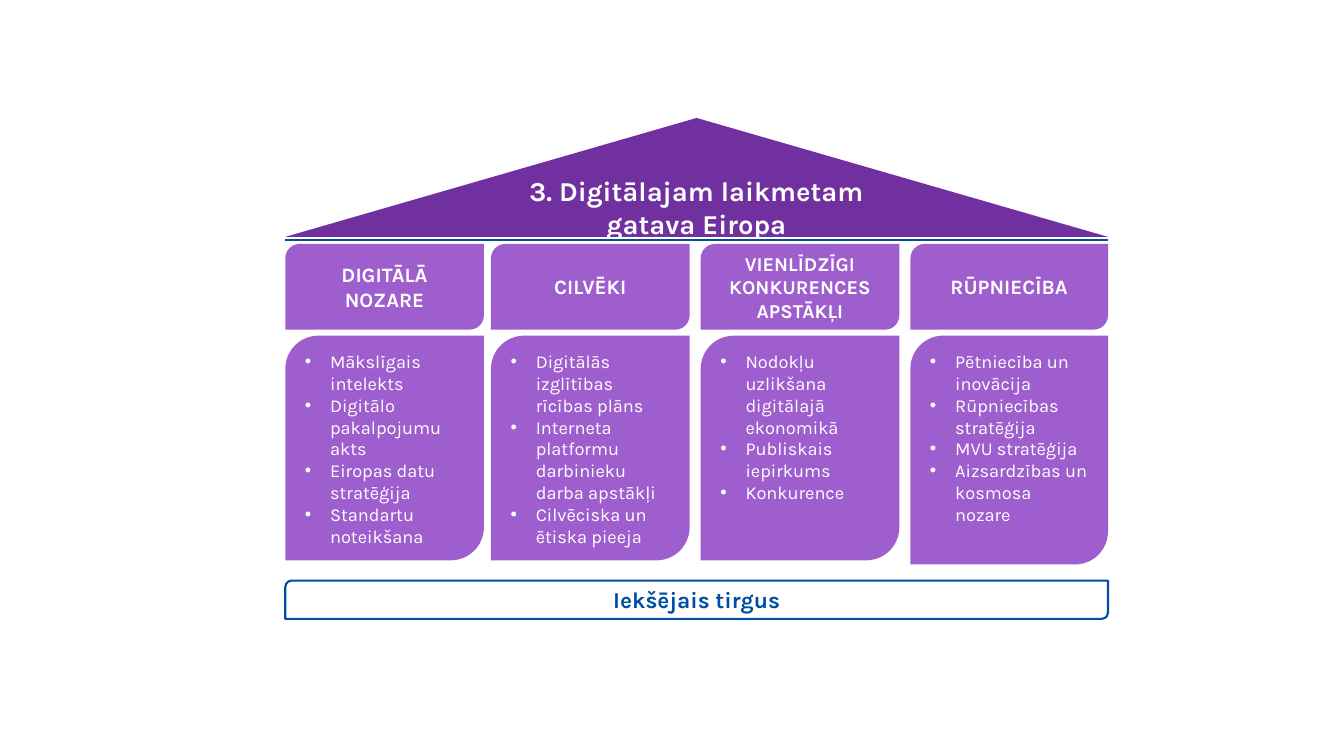
from lxml.etree import SubElement as Sub
from pptx import Presentation
from pptx.dml.color import RGBColor as Rgb
from pptx.enum.shapes import MSO_CONNECTOR as Conn, MSO_SHAPE as Kind
from pptx.enum.text import MSO_ANCHOR as Anchor, PP_ALIGN as Align
from pptx.oxml.ns import qn
from pptx.util import Inches, Pt

HUES = {"roof": "7030A0", "wall": "9E5ECE", "blue": "004DA2", "white": "FFFFFF"}
FACE = "Karla"
LEFT, WIDTH = 2.83, 8.16
COLS = [
    (2.83, 1.97, 2.23, "DIGITĀLĀ NOZARE", 14.6,
     ["Mākslīgais intelekts", "Digitālo pakalpojumu akts",
      "Eiropas datu stratēģija", "Standartu noteikšana"]),
    (4.87, 1.97, 2.23, "CILVĒKI", 14.6,
     ["Digitālās izglītības rīcības plāns",
      "Interneta platformu darbinieku darba apstākļi",
      "Cilvēciska un ētiska pieeja"]),
    (6.95, 1.97, 2.23, "VIENLĪDZĪGI KONKURENCES APSTĀKĻI", 14,
     ["Nodokļu uzlikšana digitālajā ekonomikā", "Publiskais iepirkums",
      "Konkurence"]),
    (9.03, 1.96, 2.27, "RŪPNIECĪBA", 14.6,
     ["Pētniecība un inovācija", "Rūpniecības stratēģija", "MVU stratēģija",
      "Aizsardzības un kosmosa nozare"]),
]


def hue(name):
    """Return the named colour."""
    return Rgb.from_string(HUES[name])


def add_block(slide, kind, box, fill=None):
    """Add a flat shape, filled or with a blue outline."""
    block = slide.shapes.add_shape(kind, *map(Inches, box))
    block.shadow.inherit = False
    if fill:
        block.fill.solid()
        block.fill.fore_color.rgb = hue(fill)
        block.line.fill.background()
    else:
        block.fill.background()
        block.line.color.rgb = hue("blue")
        block.line.width = Pt(1.5)
    block.text_frame.word_wrap = True
    return block


def style(para, size, color="white", bold=False):
    """Format the runs of a paragraph."""
    for run in para.runs:
        font = run.font
        font.name, font.size, font.bold = FACE, Pt(size), bold
        font.color.rgb = hue(color)


def add_label(slide, kind, box, text, size, fill=None):
    """Add a block with a centred bold label."""
    frame = add_block(slide, kind, box, fill).text_frame
    frame.text = text
    frame.vertical_anchor = Anchor.MIDDLE
    para = frame.paragraphs[0]
    para.alignment = Align.CENTER
    style(para, size, "white" if fill else "blue", True)


def add_list(slide, box, items):
    """Add a block with a bulleted list."""
    frame = add_block(slide, Kind.ROUND_2_DIAG_RECTANGLE, box, "wall").text_frame
    frame.vertical_anchor = Anchor.TOP
    frame.text = "\n".join(items)
    for para in frame.paragraphs:
        para.alignment = Align.LEFT
        props = para._p.get_or_add_pPr()
        props.set("marL", str(Inches(0.25)))
        props.set("indent", str(-Inches(0.25)))
        Sub(props, qn("a:buFont"), typeface="Arial")
        Sub(props, qn("a:buChar"), char="•")
        style(para, 13)


def add_roof(slide, left, top, width):
    """Add the gable with its title and the beam below."""
    add_label(slide, Kind.ISOSCELES_TRIANGLE, (left, top, width, 1.18),
              "3. Digitālajam laikmetam gatava Eiropa", 19.5, "roof")
    ends = (left, top + 1.21, left + width, top + 1.21)
    beam = slide.shapes.add_connector(Conn.STRAIGHT, *map(Inches, ends))
    beam.line.color.rgb = hue("blue")
    beam.line.width = Pt(1.5)
    Sub(beam._element.spPr, qn("a:effectLst"))


def add_pillar(slide, left, top, width, depth, head, size, items):
    """Add one pillar: its heading above its list."""
    add_label(slide, Kind.ROUND_2_DIAG_RECTANGLE, (left, top, width, 0.85),
              head, size, "wall")
    add_list(slide, (left, top + 0.91, width, depth), items)


def main():
    """Build the slide and save it."""
    deck = Presentation()
    deck.slide_width, deck.slide_height = Inches(13.33), Inches(7.5)
    slide = deck.slides.add_slide(deck.slide_layouts[6])
    add_roof(slide, LEFT, 1.17, WIDTH)
    for left, width, depth, head, size, items in COLS:
        add_pillar(slide, left, 2.42, width, depth, head, size, items)
    add_label(slide, Kind.ROUND_2_DIAG_RECTANGLE, (LEFT, 5.76, WIDTH, 0.38),
              "Iekšējais tirgus", 16.2)
    deck.save("out.pptx")


if __name__ == "__main__":
    main()
